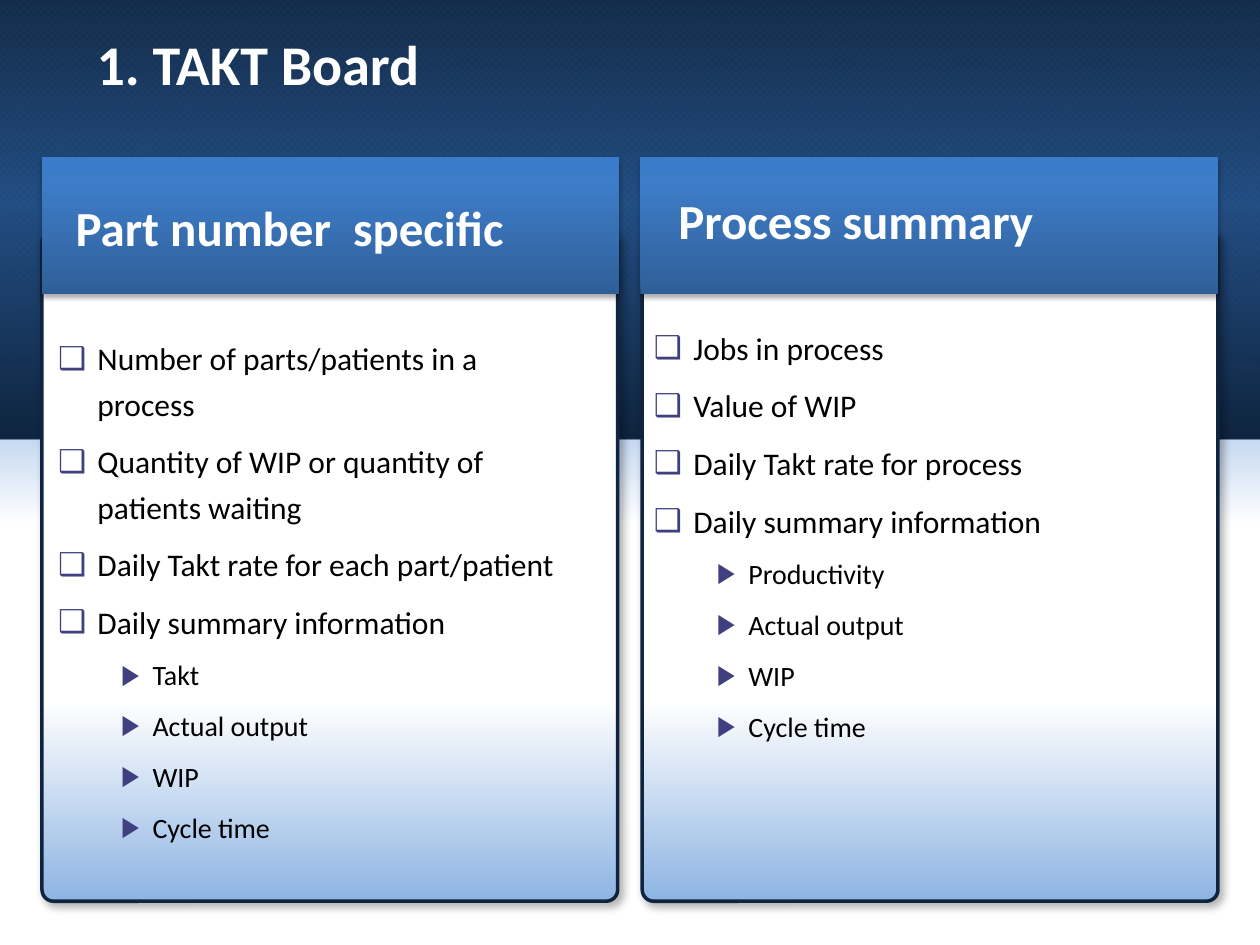
from pptx import Presentation
from pptx.dml.color import RGBColor
from pptx.enum.dml import MSO_PATTERN
from pptx.enum.shapes import MSO_SHAPE as Kind
from pptx.enum.text import MSO_ANCHOR as Anchor, MSO_AUTO_SIZE as Fit, PP_ALIGN as Align
from pptx.oxml import parse_xml
from pptx.oxml.ns import nsdecls, qn
from pptx.util import Pt

# Content: list items are (level, text)
TITLE = "1. TAKT Board"
LEFT_HEAD = "Part number  specific"
RIGHT_HEAD = "Process summary"
LEFT = [
    (0, "Number of parts/patients in a process"),
    (0, "Quantity of WIP or quantity of patients waiting"),
    (0, "Daily Takt rate for each part/patient"),
    (0, "Daily summary information"),
    (1, "Takt"), (1, "Actual output"), (1, "WIP"), (1, "Cycle time"),
]
RIGHT = [
    (0, "Jobs in process"),
    (0, "Value of WIP"),
    (0, "Daily Takt rate for process"),
    (0, "Daily summary information"),
    (1, "Productivity"), (1, "Actual output"), (1, "WIP"), (1, "Cycle time"),
]

# Style
FONT = "Calibri"
WHITE = RGBColor(0xFF, 0xFF, 0xFF)
BLACK = RGBColor(0, 0, 0)
NAVY = RGBColor(0x0F, 0x24, 0x3E)
BLUE = RGBColor(0x1F, 0x49, 0x7D)
SKY = RGBColor(0x55, 0x8E, 0xD5)
PALE = RGBColor(0x8E, 0xB4, 0xE3)
HEAD_LOW = RGBColor(0x2F, 0x5F, 0x99)
HEAD_MID = RGBColor(0x3D, 0x7C, 0xC7)
HEAD_TOP = RGBColor(0x3A, 0x7C, 0xCB)
MARK = RGBColor(0x40, 0x40, 0x80)

# Per list level: size, left margin, hang, space before, bullet
LEVELS = [(18, 22.5, 22.5, 7, "❑"), (16, 54, 18, 6, "▶")]

# Gradient stops: position %, colour, opacity %
GLOW = [(0, PALE, 100), (29, WHITE, 100), (100, WHITE, 100)]
NIGHT = [(0, NAVY, 90), (46, BLUE, 90), (100, NAVY, 100)]
CARD = [(70, WHITE, 100), (100, PALE, 100)]
HEAD = [(0, HEAD_LOW, 100), (80, HEAD_MID, 100), (100, HEAD_TOP, 100)]

deck = Presentation()
deck.slide_width, deck.slide_height = Pt(720), Pt(540)
slide = deck.slides.add_slide(deck.slide_layouts[4])
holders = {h.placeholder_format.idx: h for h in slide.placeholders}


def add_box(box, kind=Kind.RECTANGLE):
    shape = slide.shapes.add_shape(kind, *map(Pt, box))
    shape.shadow.inherit = False
    shape.line.fill.background()
    return shape


def shade(shape, stops, angle=90):
    marks = "".join(
        f'<a:gs pos="{pos * 1000}"><a:srgbClr val="{color}">'
        f'<a:alpha val="{alpha * 1000}"/></a:srgbClr></a:gs>'
        for pos, color, alpha in stops)
    shape.fill.background()
    blank = shape.element.spPr.find(qn("a:noFill"))
    blank.getparent().replace(blank, parse_xml(
        f'<a:gradFill {nsdecls("a")} rotWithShape="1"><a:gsLst>{marks}</a:gsLst>'
        f'<a:lin ang="{angle * 60000}" scaled="0"/></a:gradFill>'))


def drop_shadow(shape, alpha, blur, dist, angle):
    effects = shape.element.spPr.find(qn("a:effectLst"))
    effects.append(parse_xml(
        f'<a:outerShdw {nsdecls("a")} blurRad="{Pt(blur)}" dist="{Pt(dist)}" '
        f'dir="{angle * 60000}" algn="tl" rotWithShape="0"><a:srgbClr val="{BLACK}">'
        f'<a:alpha val="{alpha * 1000}"/></a:srgbClr></a:outerShdw>'))


def place(index, box, anchor):
    holder = holders[index]
    holder.left, holder.top, holder.width, holder.height = map(Pt, box)
    frame = holder.text_frame
    frame.word_wrap = True
    frame.auto_size = Fit.NONE
    frame.vertical_anchor = anchor
    # Text goes in front of the panels
    holder.element.getparent().append(holder.element)
    return frame


def style(para, size, color, bold):
    for run in para.runs:
        font = run.font
        font.name, font.size, font.bold = FONT, Pt(size), bold
        font.color.rgb = color


def add_head(index, text, box, size, align=Align.LEFT, spacing=1.0):
    frame = place(index, box, Anchor.BOTTOM)
    frame.text = text
    para = frame.paragraphs[0]
    para.alignment, para.line_spacing = align, spacing
    para.space_before = Pt(0)
    style(para, size, WHITE, True)


def add_list(index, items, box):
    frame = place(index, box, Anchor.TOP)
    frame.text = "\n".join(text for _, text in items)
    for para, (level, _) in zip(frame.paragraphs, items):
        size, margin, hang, gap, bullet = LEVELS[level]
        para.level = level
        para.line_spacing, para.space_before = 1.2, Pt(gap)
        style(para, size, BLACK, False)
        props = para._p.get_or_add_pPr()
        props.set("marL", str(Pt(margin)))
        props.set("indent", str(-Pt(hang)))
        props.append(parse_xml(
            f'<a:buClr {nsdecls("a")}><a:srgbClr val="{MARK}"/></a:buClr>'))
        props.append(parse_xml(f'<a:buChar {nsdecls("a")} char="{bullet}"/>'))


# Backdrop
shade(add_box((-1, 204, 722, 333)), GLOW)
TOP = (-2, -1, 723, 252)
weave = add_box(TOP)
weave.fill.patterned()
weave.fill.pattern = MSO_PATTERN.OUTLINED_DIAMOND
weave.fill.fore_color.rgb, weave.fill.back_color.rgb = NAVY, SKY
shade(add_box(TOP), NIGHT)

# Cards
for left in (24, 367):
    card = add_box((left, 132, 329, 383), Kind.ROUNDED_RECTANGLE)
    card.adjustments[0] = 0.02
    shade(card, CARD)
    card.line.color.rgb, card.line.width = NAVY, Pt(2)
    drop_shadow(card, 30, 4.5, 2.6, 53)

# Header bars
for left in (366, 24):
    bar = add_box((left, 90, 330, 78))
    shade(bar, HEAD, 270)
    drop_shadow(bar, 35, 3.1, 1.8, 90)

# Text
add_head(0, TITLE, (48, 13, 354, 46), 32)
add_head(3, RIGHT_HEAD, (336, 96, 306, 50), 28, Align.CENTER)
add_head(1, LEFT_HEAD, (36, 116, 323, 34), 28, spacing=1.2)
add_list(2, LEFT, (26, 186, 304, 313))
add_list(4, RIGHT, (366.5, 180, 323, 262))

deck.save("out.pptx")
